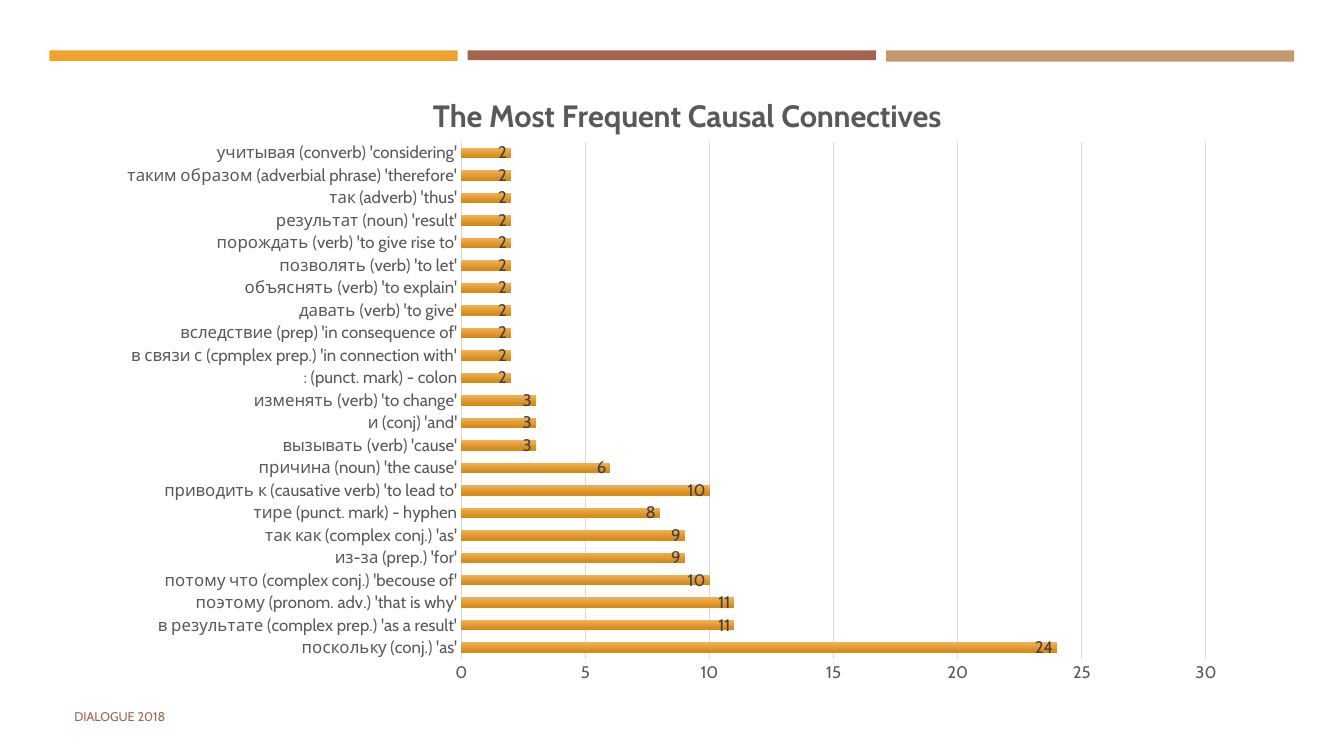
from dataclasses import dataclass

import lxml.etree
import pptx
import pptx.chart.data
import pptx.dml.color
import pptx.enum.chart
import pptx.enum.shapes
import pptx.enum.text
import pptx.oxml.ns
import pptx.util

Pt = pptx.util.Pt
FONT = "Cabin"
GREY = "595959"
RULE_GREY = "D9D9D9"


@dataclass(frozen=True)
class Band:
    color: str
    height: float


@dataclass(frozen=True)
class Connective:
    label: str
    count: int


BANDS = [Band("F0A22E", 7.5), Band("A5644E", 7), Band("C3986D", 8)]

CONNECTIVES = [
    Connective("поскольку (conj.) 'as'", 24),
    Connective("в результате (complex prep.) 'as a result'", 11),
    Connective("поэтому (pronom. adv.) 'that is why'", 11),
    Connective("потому что (complex conj.) 'becouse of'", 10),
    Connective("из-за (prep.) 'for'", 9),
    Connective("так как (complex conj.) 'as'", 9),
    Connective("тире (punct. mark) - hyphen", 8),
    Connective("приводить к (causative verb) 'to lead to'", 10),
    Connective("причина (noun) 'the cause'", 6),
    Connective("вызывать (verb) 'cause'", 3),
    Connective("и (conj) 'and'", 3),
    Connective("изменять (verb) 'to change'", 3),
    Connective(": (punct. mark) - colon", 2),
    Connective("в связи с (cpmplex prep.) 'in connection with'", 2),
    Connective("вследствие (prep) 'in consequence of'", 2),
    Connective("давать (verb) 'to give'", 2),
    Connective("объяснять (verb) 'to explain'", 2),
    Connective("позволять (verb) 'to let'", 2),
    Connective("порождать (verb) 'to give rise to'", 2),
    Connective("результат (noun) 'result'", 2),
    Connective("так (adverb) 'thus'", 2),
    Connective("таким образом (adverbial phrase) 'therefore'", 2),
    Connective("учитывая (converb) 'considering'", 2),
]


def rgb(color: str) -> pptx.dml.color.RGBColor:
    return pptx.dml.color.RGBColor.from_string(color)


def style_font(font, size: float, color: str, bold: bool = False) -> None:
    font.name = FONT
    font.size = Pt(size)
    font.bold = bold
    font.color.rgb = rgb(color)


def place(parent, **settings) -> None:
    """Give a chart title or plot area a manual layout, in fractions of the chart."""
    qn = pptx.oxml.ns.qn
    layout = parent.find(qn("c:layout"))
    if layout is None:
        layout = lxml.etree.Element(qn("c:layout"))
        parent.insert(0, layout)
    manual = lxml.etree.SubElement(layout, qn("c:manualLayout"))
    for key, value in settings.items():
        lxml.etree.SubElement(manual, qn(f"c:{key}")).set("val", str(value))


def draw_bands(slide) -> None:
    left, top, width, pitch = 35.3, 36, 291.6, 298.8
    for index, band in enumerate(BANDS):
        strip = slide.shapes.add_shape(
            pptx.enum.shapes.MSO_SHAPE.RECTANGLE,
            Pt(left + index * pitch), Pt(top), Pt(width), Pt(band.height))
        strip.shadow.inherit = False
        strip.fill.solid()
        strip.fill.fore_color.rgb = rgb(band.color)
        strip.line.fill.background()


def style_axes(chart) -> None:
    for axis in (chart.category_axis, chart.value_axis):
        axis.major_tick_mark = pptx.enum.chart.XL_TICK_MARK.NONE
        axis.minor_tick_mark = pptx.enum.chart.XL_TICK_MARK.NONE
        style_font(axis.tick_labels.font, 12, GREY)
    connectives, counts = chart.category_axis, chart.value_axis
    connectives.has_major_gridlines = False
    connectives.format.line.color.rgb = rgb(RULE_GREY)
    connectives.format.line.width = Pt(1)
    counts.minimum_scale, counts.maximum_scale, counts.major_unit = 0, 30, 5
    counts.format.line.fill.background()
    counts.has_major_gridlines = True
    counts.major_gridlines.format.line.color.rgb = rgb(RULE_GREY)
    counts.major_gridlines.format.line.width = Pt(0.75)


def style_bars(plot) -> None:
    plot.gap_width = 115
    plot.overlap = -20
    plot.vary_by_categories = False
    bars = plot.series[0]
    bars.invert_if_negative = False
    fill = bars.format.fill
    fill.gradient()
    fill.gradient_angle = 270
    for stop, (position, color) in zip(
            fill.gradient_stops, [(0, "F2B25A"), (0.84, "D68B1A")]):
        stop.position = position
        stop.color.rgb = rgb(color)
    labels = bars.data_labels
    labels.show_value = True
    labels.position = pptx.enum.chart.XL_LABEL_POSITION.INSIDE_END
    style_font(labels.font, 12, "404040")


def draw_chart(slide) -> None:
    data = pptx.chart.data.CategoryChartData()
    data.categories = [item.label for item in CONNECTIVES]
    data.add_series("Series 1", [item.count for item in CONNECTIVES])
    chart = slide.shapes.add_chart(
        pptx.enum.chart.XL_CHART_TYPE.BAR_CLUSTERED,
        Pt(74.2), Pt(47.5), Pt(810.7), Pt(449.3), data).chart
    style_font(chart.font, 10, "000000")
    chart.has_legend = False
    chart.has_title = True
    heading = chart.chart_title.text_frame.paragraphs[0].add_run()
    heading.text = "The Most Frequent Causal Connectives"
    style_font(heading.font, 22, GREY, bold=True)
    style_axes(chart)
    style_bars(chart.plots[0])

    title = chart.chart_title._element
    place(title, xMode="edge", yMode="edge", x=0.285, y=0.036)
    plot_area = chart._chartSpace.chart.plotArea
    place(plot_area, layoutTarget="inner", xMode="edge", yMode="edge",
          x=0.315, y=0.12, w=0.656, h=0.822)


def draw_footer(slide) -> None:
    footer = slide.shapes.add_textbox(Pt(46), Pt(497.5), Pt(544), Pt(28.8)).text_frame
    footer.word_wrap = True
    footer.vertical_anchor = pptx.enum.text.MSO_ANCHOR.MIDDLE
    conference = footer.paragraphs[0].add_run()
    conference.text = "DIALOGUE 2018"
    style_font(conference.font, 9, "A5644E")


def main() -> None:
    deck = pptx.Presentation()
    deck.slide_width, deck.slide_height = Pt(960), Pt(540)
    slide = deck.slides.add_slide(deck.slide_layouts[6])
    draw_bands(slide)
    draw_chart(slide)
    draw_footer(slide)
    deck.save("out.pptx")


if __name__ == "__main__":
    main()
